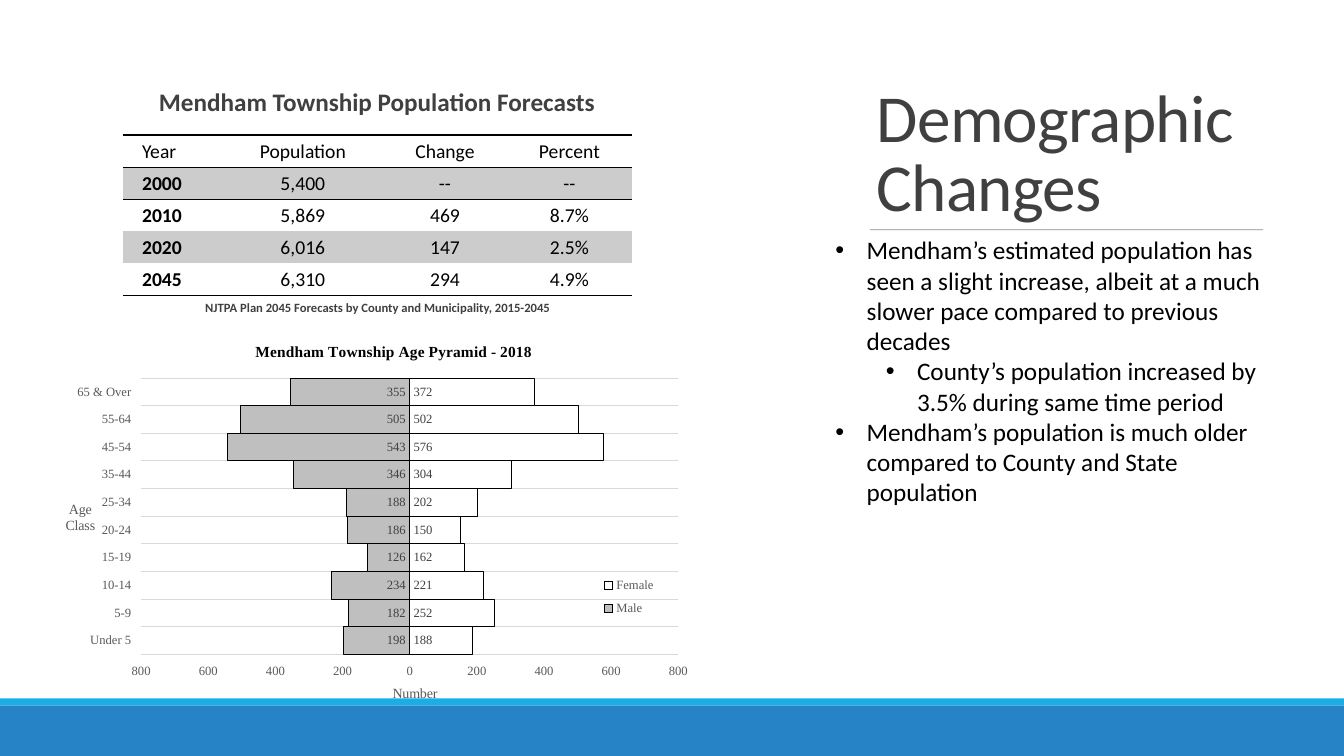
"""Build the demographic changes slide: forecast table, age pyramid and findings."""
from lxml.etree import SubElement
from pptx import Presentation
from pptx.chart.data import CategoryChartData
from pptx.dml.color import RGBColor
from pptx.enum.chart import (XL_CHART_TYPE, XL_LABEL_POSITION, XL_LEGEND_POSITION,
                             XL_TICK_LABEL_POSITION, XL_TICK_MARK)
from pptx.enum.shapes import MSO_CONNECTOR, MSO_SHAPE
from pptx.enum.text import MSO_ANCHOR, PP_ALIGN
from pptx.oxml import parse_xml
from pptx.oxml.ns import nsdecls, qn
from pptx.util import Inches, Pt

COLORS = {"black": "000000", "white": "FFFFFF", "heading": "404040", "axis": "595959",
          "rule": "808080", "grid": "D9D9D9", "stripe": "CCCCCC", "male": "BFBFBF",
          "cyan": "1CADE4", "blue": "2683C6"}
SANS, SERIF = "Calibri", "Times New Roman"
COLUMNS, ROWS = 160, 90
CELL = Inches(7.5) // ROWS

FORECASTS = [
    ("Year", "Population", "Change", "Percent"),
    ("2000", "5,400", "--", "--"),
    ("2010", "5,869", "469", "8.7%"),
    ("2020", "6,016", "147", "2.5%"),
    ("2045", "6,310", "294", "4.9%"),
]
AGES = ["Under 5", "5-9", "10-14", "15-19", "20-24", "25-34", "35-44", "45-54",
        "55-64", "65 & Over"]
MALE = [198, 182, 234, 126, 186, 188, 346, 543, 505, 355]
FEMALE = [188, 252, 221, 162, 150, 202, 304, 576, 502, 372]
FINDINGS = [
    "Mendham’s estimated population has seen a slight increase, albeit at a much "
    "slower pace compared to previous decades",
    "County’s population increased by 3.5% during same time period",
    "Mendham’s population is much older compared to County and State population",
]


def grid(*counts):
    return [int(count * CELL) for count in counts]


def color(name):
    return RGBColor.from_string(COLORS[name])


def style(font, size, ink, face=SANS, bold=False):
    font.size, font.name, font.bold = Pt(size), face, bold
    font.color.rgb = color(ink)


def bullet(paragraph, level):
    properties = paragraph._p.get_or_add_pPr()
    properties.set("marL", str(Inches(0.31 + 0.5 * level)))
    properties.set("indent", str(Inches(-0.31)))
    SubElement(properties, qn("a:buFont")).set("typeface", "Arial")
    SubElement(properties, qn("a:buChar")).set("char", "•")


def write(frame, text, size=14, ink="black", face=SANS, bold=False, align=PP_ALIGN.LEFT,
          spacing=None, after=None, tracking=None, levels=()):
    for index, line in enumerate(text.split("\n")):
        paragraph = frame.add_paragraph() if index else frame.paragraphs[0]
        paragraph.alignment = align
        if spacing:
            paragraph.line_spacing = spacing
        if after is not None:
            paragraph.space_after = Pt(after)
        run = paragraph.add_run()
        run.text = line
        style(run.font, size, ink, face, bold)
        if tracking:
            run.font._element.set("spc", str(tracking))
        if levels:
            bullet(paragraph, levels[index])


def text_box(slide, place, text, anchor=MSO_ANCHOR.TOP, **form):
    frame = slide.shapes.add_textbox(*grid(*place)).text_frame
    frame.word_wrap = True
    frame.vertical_anchor = anchor
    write(frame, text, **form)


def band(slide, place, ink):
    strip = slide.shapes.add_shape(MSO_SHAPE.RECTANGLE, *grid(*place))
    strip.shadow.inherit = False
    strip.fill.solid()
    strip.fill.fore_color.rgb = color(ink)
    strip.line.fill.background()


def rule(slide, left, right, row):
    divider = slide.shapes.add_connector(MSO_CONNECTOR.STRAIGHT, *grid(left, row, right, row))
    divider.line.width = Pt(0.5)
    divider.line.color.rgb = color("rule")
    properties = divider._element.spPr
    shade = next(properties.iter(qn("a:srgbClr")))
    SubElement(shade, qn("a:alpha")).set("val", "90000")
    SubElement(properties, qn("a:effectLst"))


def border(cell, sides):
    for index, side in enumerate(sides):
        cell._tc.get_or_add_tcPr().insert(index, parse_xml(
            f'<a:ln{side} {nsdecls("a")} w="{Pt(1)}"><a:solidFill>'
            f'<a:srgbClr val="{COLORS["black"]}"/></a:solidFill></a:ln{side}>'))


def forecast_table(slide, place, widths):
    table = slide.shapes.add_table(len(FORECASTS), len(widths), *grid(*place)).table
    table.first_row = table.horz_banding = False
    table._tbl.tblPr.find(qn("a:tableStyleId")).text = "{2D5ABB26-0587-4C30-8999-92F81FD0307C}"
    for column, width in zip(table.columns, grid(*widths)):
        column.width = width
    last = len(FORECASTS) - 1
    for row, values in enumerate(FORECASTS):
        for column, value in enumerate(values):
            cell = table.cell(row, column)
            cell.margin_left = cell.margin_right = Inches(0.19)
            cell.margin_top, cell.margin_bottom = Inches(0.03), 0
            if row % 2:
                cell.fill.solid()
                cell.fill.fore_color.rgb = color("stripe")
            else:
                cell.fill.background()
            border(cell, {0: "TB", 1: "T", last: "B"}.get(row, ""))
            write(cell.text_frame, value, bold=row > 0 and column == 0, spacing=1.07,
                  align=PP_ALIGN.CENTER if column else PP_ALIGN.LEFT)


def lay_out(element, index, inner=False, **shares):
    for old in element.findall(qn("c:layout")):
        element.remove(old)
    target = '<c:layoutTarget val="inner"/>' if inner else ""
    modes = "".join(f'<c:{key}Mode val="edge"/>' for key in "xy")
    values = "".join(f'<c:{key} val="{share}"/>' for key, share in shares.items())
    element.insert(index, parse_xml(
        f'<c:layout {nsdecls("c")}><c:manualLayout>{target}{modes}{values}'
        '</c:manualLayout></c:layout>'))


def chart_title(title, text, x, y, **form):
    write(title.text_frame, text, face=SERIF, align=PP_ALIGN.CENTER, **form)
    title.text_frame._txBody.bodyPr.set("rot", "0")
    lay_out(title._element, 1, x=x, y=y)


def outline(line, ink):
    line.color.rgb = color(ink)
    line.width = Pt(0.75)


def pyramid_axes(chart):
    ages, numbers = chart.category_axis, chart.value_axis
    for axis in (ages, numbers):
        axis.major_tick_mark = axis.minor_tick_mark = XL_TICK_MARK.NONE
        axis.tick_label_position = XL_TICK_LABEL_POSITION.LOW
        style(axis.tick_labels.font, 9, "axis", SERIF)
    ages.has_major_gridlines, numbers.has_major_gridlines = True, False
    outline(ages.major_gridlines.format.line, "grid")
    outline(ages.format.line, "black")
    numbers.format.line.fill.background()
    numbers.minimum_scale, numbers.maximum_scale, numbers.major_unit = -800, 800, 200
    numbers.tick_labels.number_format = "#,##0;#,##0"
    numbers.tick_labels.number_format_is_linked = False
    chart_title(ages.axis_title, "Age\nClass", 0.02, 0.46, size=10, ink="axis")
    chart_title(numbers.axis_title, "Number", 0.52, 0.94, size=10, ink="axis")


def age_pyramid(slide, place):
    data = CategoryChartData(number_format="#,##0;#,##0")
    data.categories = AGES
    data.add_series("Male", [-count for count in MALE])
    data.add_series("Female", FEMALE)
    chart = slide.shapes.add_chart(XL_CHART_TYPE.BAR_CLUSTERED, *grid(*place), data).chart
    style(chart.font, 10, "black")
    chart.has_title = chart.has_legend = True
    chart_title(chart.chart_title, "Mendham Township Age Pyramid - 2018", 0.31, 0.05,
                size=11, bold=True)
    pyramid_axes(chart)
    plot = chart.plots[0]
    plot.gap_width, plot.overlap, plot.vary_by_categories = 0, 100, False
    for series, ink in zip(plot.series, ("male", "white")):
        series.invert_if_negative = False
        series.format.fill.solid()
        series.format.fill.fore_color.rgb = color(ink)
        outline(series.format.line, "black")
        labels = series.data_labels
        labels.show_value = True
        labels.position = XL_LABEL_POSITION.INSIDE_BASE
        labels.number_format, labels.number_format_is_linked = "#,##0;#,##0", False
        style(labels.font, 9, "heading", SERIF)
    chart.legend.position = XL_LEGEND_POSITION.RIGHT
    chart.legend.include_in_layout = False
    style(chart.legend.font, 9, "axis", SERIF)
    lay_out(chart.legend._element, 1, x=0.83, y=0.65, w=0.11, h=0.14)
    lay_out(chart._chartSpace.chart.plotArea, 0, inner=True, x=0.14, y=0.15, w=0.82, h=0.72)


def main():
    deck = Presentation()
    deck.slide_width, deck.slide_height = grid(COLUMNS, ROWS)
    slide = deck.slides.add_slide(deck.slide_layouts[6])
    band(slide, (0, 0, COLUMNS, 83.16), "white")
    text_box(slide, (103.2, 8.28, 48.48, 19.08), "Demographic Changes", MSO_ANCHOR.BOTTOM,
             size=48, ink="heading", spacing=0.85, tracking=-50)
    rule(slide, 103.56, 150.36, 27.36)
    band(slide, (0, 83.16, COLUMNS, 0.84), "cyan")
    band(slide, (0, 84, COLUMNS, 6), "blue")
    forecast_table(slide, (14.64, 16.08, 60.48, 19.08), (11.88, 19.08, 14.76, 14.88))
    age_pyramid(slide, (5.88, 38.16, 78, 45.84))
    text_box(slide, (14.64, 10.08, 60.48, 4.44), "Mendham Township Population Forecasts",
             size=18, ink="heading", bold=True, align=PP_ALIGN.CENTER, spacing=0.9, after=6)
    text_box(slide, (17.52, 35.16, 54.84, 6.84),
             "NJTPA Plan 2045 Forecasts by County and Municipality, 2015-2045",
             size=9, ink="heading", bold=True, align=PP_ALIGN.CENTER)
    text_box(slide, (98.28, 27.36, 54.84, 37.56), "\n".join(FINDINGS), size=18,
             levels=(0, 1, 0))
    deck.save("out.pptx")


if __name__ == "__main__":
    main()
